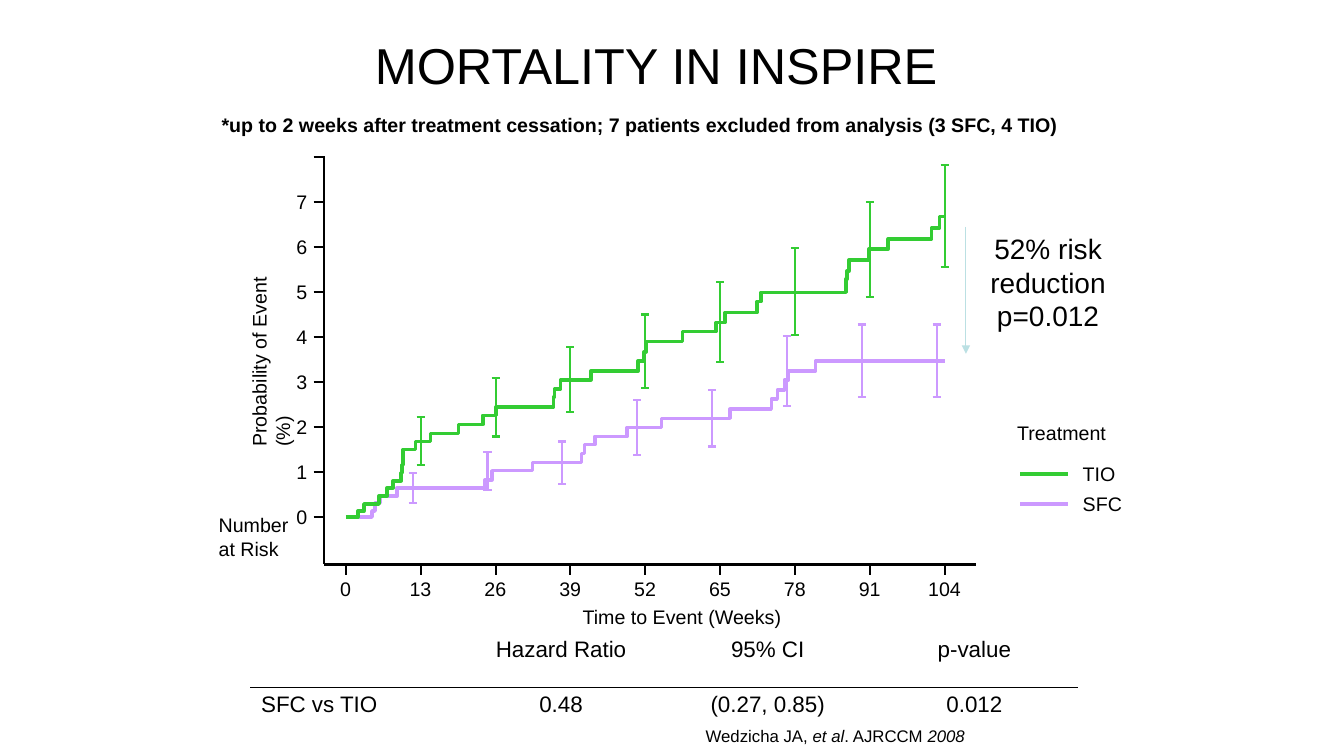
from dataclasses import dataclass

import pptx
import pptx.dml.color
import pptx.enum.shapes
import pptx.enum.text
import pptx.oxml.ns
import pptx.util
from lxml import etree
from pptx.util import Inches

BLACK = "000000"
FONT = "Arial"
LEFT = pptx.enum.text.PP_ALIGN.LEFT
CENTER = pptx.enum.text.PP_ALIGN.CENTER
AXIS_X, AXIS_Y = 3.21, 5.6
ORIGIN_X, ORIGIN_Y = 3.43, 5.13
WEEK_STEP, PERCENT_STEP = 0.7425, 0.447
TICK, CAP = 0.1, 0.04


@dataclass
class Run:
    text: str
    bold: bool = False
    italic: bool = False


@dataclass
class Label:
    left: float
    top: float
    width: float
    height: float
    paragraphs: list[list[Run]]
    size: float = 14
    align: pptx.enum.text.PP_ALIGN = LEFT
    wrap: bool = False
    rotation: float = 0
    middle: bool = False


@dataclass
class Arm:
    name: str
    color: str
    legend_y: float
    bar_shift: float
    steps: list[tuple[float, float]]
    bars: list[tuple[float, float]]


ARMS = [
    Arm("SFC", "CC99FF", 5.0, -0.08,
        [(3.69, 5.07), (3.72, 4.99), (3.77, 4.92), (3.94, 4.84), (4.81, 4.76), (4.88, 4.67),
         (5.28, 4.59), (5.77, 4.5), (5.8, 4.41), (5.9, 4.33), (6.22, 4.24), (6.56, 4.15),
         (7.24, 4.06), (7.65, 3.96), (7.71, 3.87), (7.78, 3.77), (7.82, 3.68), (8.09, 3.58)],
        [(4.69, 4.99), (4.48, 4.86), (4.38, 4.8), (3.97, 4.51),
         (3.87, 4.43), (3.33, 4.03), (3.22, 3.94), (3.22, 3.94)]),
    Arm("TIO", "33CC33", 4.7, 0,
        [(3.55, 5.07), (3.61, 5.0), (3.76, 4.92), (3.84, 4.84), (3.9, 4.77), (3.98, 4.69),
         (3.99, 4.61), (4.0, 4.46), (4.12, 4.38), (4.27, 4.3), (4.55, 4.21), (4.79, 4.12),
         (4.92, 4.04), (5.49, 3.94), (5.5, 3.86), (5.56, 3.77), (5.86, 3.68), (6.33, 3.58),
         (6.39, 3.49), (6.41, 3.39), (6.77, 3.29), (7.1, 3.2), (7.19, 3.1), (7.51, 2.99),
         (7.55, 2.9), (8.39, 2.77), (8.4, 2.69), (8.42, 2.58), (8.62, 2.47), (8.81, 2.37),
         (9.24, 2.26), (9.32, 2.15)],
        [(4.14, 4.61), (3.75, 4.33), (3.44, 4.09), (3.12, 3.85),
         (2.8, 3.59), (2.46, 3.32), (2.0, 2.95), (1.64, 2.65)]),
]

LABELS = [
    Label(2.02, 0.21, 8.98, 0.86, [[Run("MORTALITY IN INSPIRE")]], 36, CENTER, True, middle=True),
    Label(2.1, 1.07, 10, 0.33, [[Run("*up to 2 weeks after treatment cessation; 7 patients "
                                     "excluded from analysis (3 SFC, 4 TIO)", bold=True)]], wrap=True),
    Label(2.07, 5.04, 0.9, 0.57, [[Run("Number")], [Run("at Risk")]]),
    Label(1.5, 3.3, 2.13, 0.33, [[Run("Probability of Event (%)")]], wrap=True, rotation=270),
    Label(5.68, 5.95, 2.17, 0.33, [[Run("Time to Event (Weeks)")]]),
    Label(9.99, 4.13, 1.08, 0.33, [[Run("Treatment")]]),
    Label(9.4, 2.25, 1.99, 1.1, [[Run("52% risk reduction")], [Run("p=0.012")]], 20, CENTER, True),
    Label(6.9, 7.15, 4.73, 0.3, [[Run("Wedzicha JA, "), Run("et al", italic=True),
                                  Run(". AJRCCM "), Run("2008", italic=True)]], 12, wrap=True),
]

RESULTS = [["", "Hazard Ratio", "95% CI", "p-value"],
           ["SFC vs TIO", "0.48", "(0.27, 0.85)", "0.012"]]


def rgb(value: str) -> pptx.dml.color.RGBColor:
    return pptx.dml.color.RGBColor.from_string(value)


def child(parent, tag: str, **attributes: str):
    element = etree.SubElement(parent, pptx.oxml.ns.qn(tag))
    for name, value in attributes.items():
        element.set(name, value)
    return element


def add_run(paragraph, run: Run, size: float) -> None:
    text_run = paragraph.add_run()
    text_run.text = run.text
    font = text_run.font
    font.name, font.size = FONT, pptx.util.Pt(size)
    font.bold, font.italic = run.bold, run.italic
    font.color.rgb = rgb(BLACK)


def add_label(slide, label: Label):
    shape = slide.shapes.add_textbox(*map(Inches, (label.left, label.top, label.width, label.height)))
    shape.rotation = label.rotation
    frame = shape.text_frame
    frame.word_wrap = label.wrap
    if label.middle:
        frame.vertical_anchor = pptx.enum.text.MSO_ANCHOR.MIDDLE
    for index, runs in enumerate(label.paragraphs):
        paragraph = frame.add_paragraph() if index else frame.paragraphs[0]
        paragraph.alignment = label.align
        for run in runs:
            add_run(paragraph, run, label.size)
    return shape


def add_line(slide, x1: float, y1: float, x2: float, y2: float,
             color: str = BLACK, width: float = 1.5):
    connector = slide.shapes.add_connector(
        pptx.enum.shapes.MSO_CONNECTOR.STRAIGHT, *map(Inches, (x1, y1, x2, y2)))
    connector.line.color.rgb = rgb(color)
    connector.line.width = pptx.util.Pt(width)
    child(connector._element.spPr, "a:effectLst")
    return connector


def add_axes(slide) -> None:
    add_line(slide, AXIS_X, 1.55, AXIS_X, AXIS_Y)
    add_line(slide, AXIS_X, AXIS_Y, 9.68, AXIS_Y)
    for index in range(9):
        x = ORIGIN_X + index * WEEK_STEP
        y = ORIGIN_Y - index * PERCENT_STEP
        add_line(slide, x, AXIS_Y, x, AXIS_Y + TICK)
        add_line(slide, AXIS_X - TICK, y, AXIS_X, y)
        if index < 8:
            add_label(slide, Label(2.84, y - 0.17, 0.31, 0.33, [[Run(str(index))]]))
    weeks = "".join(f"\t{13 * index}" for index in range(9))
    shape = add_label(slide, Label(3.2, 5.67, 7.8, 0.33, [[Run(weeks)]], wrap=True))
    properties = shape.text_frame.paragraphs[0]._p.get_or_add_pPr()
    stops = child(properties, "a:tabLst")
    for index in range(9):
        position = Inches(ORIGIN_X - 3.3 + index * WEEK_STEP)
        child(stops, "a:tab", pos=str(int(position)), algn="ctr")


def add_arm(slide, arm: Arm) -> None:
    points = [(ORIGIN_X, ORIGIN_Y)]
    for x, y in arm.steps:
        points += [(x, points[-1][1]), (x, y)]
    points.append((9.37, points[-1][1]))
    start, *rest = [(Inches(x), Inches(y)) for x, y in points]
    builder = slide.shapes.build_freeform(*start)
    builder.add_line_segments(rest, close=False)
    curve = builder.convert_to_shape()
    curve.shadow.inherit = False
    curve.fill.background()
    curve.line.color.rgb = rgb(arm.color)
    curve.line.width = pptx.util.Pt(2.5)
    for index, (top, bottom) in enumerate(arm.bars, 1):
        x = ORIGIN_X + index * WEEK_STEP + arm.bar_shift
        add_line(slide, x, top, x, bottom, arm.color)
        for y in (top, bottom):
            add_line(slide, x - CAP, y, x + CAP, y, arm.color)
    add_line(slide, 10.12, arm.legend_y, 10.59, arm.legend_y, arm.color, 2.5)
    add_label(slide, Label(10.64, arm.legend_y - 0.17, 0.59, 0.33, [[Run(arm.name)]]))


def add_results(slide) -> None:
    table = slide.shapes.add_table(2, 4, *map(Inches, (2.49, 6.27, 8.2, 0.92))).table
    table.first_row = table.horz_banding = False
    for row, height, border in zip(table.rows, (0.55, 0.37), ("a:lnB", "a:lnT")):
        row.height = Inches(height)
        for cell in row.cells:
            properties = cell._tc.get_or_add_tcPr()
            line = child(properties, border, w=str(int(pptx.util.Pt(1.5))))
            child(child(line, "a:solidFill"), "a:srgbClr", val=BLACK)
            cell.fill.background()
    for row_index, texts in enumerate(RESULTS):
        for column_index, text in enumerate(texts):
            paragraph = table.cell(row_index, column_index).text_frame.paragraphs[0]
            paragraph.alignment = CENTER if column_index else LEFT
            if text:
                add_run(paragraph, Run(text), 16)


def main() -> None:
    presentation = pptx.Presentation()
    presentation.slide_width, presentation.slide_height = Inches(13.33), Inches(7.5)
    slide = presentation.slides.add_slide(presentation.slide_layouts[6])
    add_results(slide)
    add_axes(slide)
    for arm in ARMS:
        add_arm(slide, arm)
    arrow = add_line(slide, 9.58, 2.25, 9.58, 3.51, "BBE0E3", 0.75)
    child(arrow.line._get_or_add_ln(), "a:tailEnd", type="triangle")
    for label in LABELS:
        add_label(slide, label)
    presentation.save("out.pptx")


if __name__ == "__main__":
    main()
